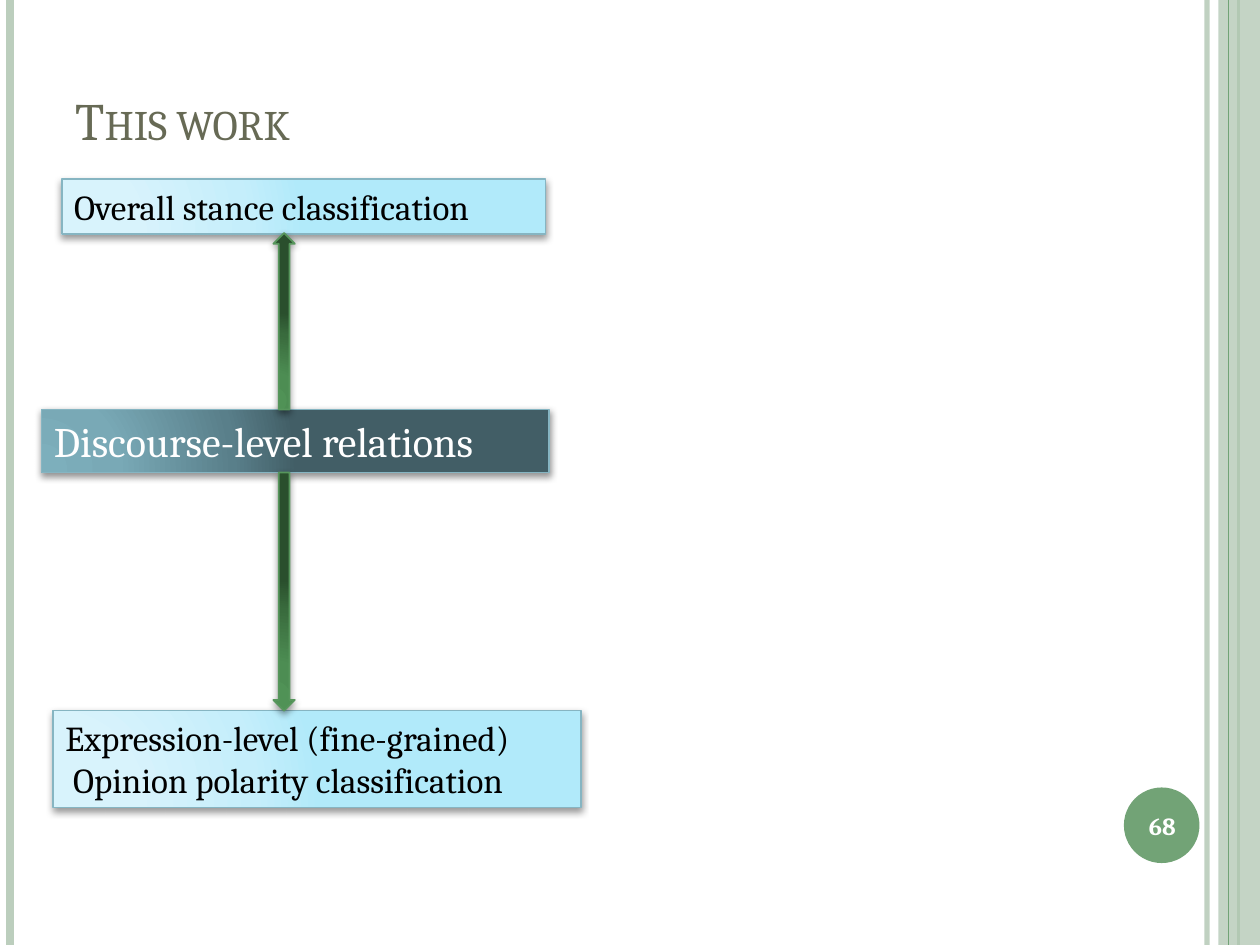
from lxml import etree
from pptx import Presentation
from pptx.dml.color import RGBColor
from pptx.enum.shapes import MSO_CONNECTOR, MSO_SHAPE
from pptx.enum.text import MSO_ANCHOR, PP_ALIGN
from pptx.oxml import parse_xml
from pptx.oxml.ns import nsdecls, qn
from pptx.util import Inches, Pt

STRAIGHT = MSO_CONNECTOR.STRAIGHT
RECT, OVAL = MSO_SHAPE.RECTANGLE, MSO_SHAPE.OVAL
UP, DOWN = MSO_SHAPE.UP_ARROW, MSO_SHAPE.DOWN_ARROW
TOP, MIDDLE, BOTTOM = MSO_ANCHOR.TOP, MSO_ANCHOR.MIDDLE, MSO_ANCHOR.BOTTOM
LEFT, CENTER = PP_ALIGN.LEFT, PP_ALIGN.CENTER

COLORS = {
    "pale": "BCCEBD", "green": "72A376", "title": "676A55",
    "black": "000000", "white": "FFFFFF",
}
STYLES = {
    "level": {"stops": ["DBF4FC", "D8F3FC", "C5EEFB", "B1EAFA"],
              "edge": "86B5C2", "shadow": (40, 2)},
    "relations": {"stops": ["7DAFBC", "79A9B6", "597F8A", "425E66"],
                  "edge": "86B5C2", "shadow": (42, 1.6)},
    "arrow": {"stops": ["509256", "4D8D53", "396B3D", "2A4F2D"],
              "edge": "57965C", "shadow": (42, 1.6)},
}
STOP_POSITIONS = [0, 30, 75, 100]


def write_text(shape, lines, size, color, anchor=TOP, align=LEFT, bold=False):
    frame = shape.text_frame
    frame.word_wrap = True
    frame.vertical_anchor = anchor
    frame.text = "\n".join(lines)
    for paragraph in frame.paragraphs:
        paragraph.alignment = align
        font = paragraph.runs[0].font
        values = {"name": "Cambria", "size": Pt(size), "bold": bold}
        for attribute, value in values.items():
            setattr(font, attribute, value)
        font.color.rgb = RGBColor.from_string(COLORS[color])


def add_glossy(kind, box, style):
    shape = slide.shapes.add_shape(kind, *map(Inches, box))
    stops = "".join(
        f'<a:gs pos="{position * 1000}"><a:srgbClr val="{color}"/></a:gs>'
        for position, color in zip(STOP_POSITIONS, style["stops"]))
    properties = shape._element.spPr
    properties.append(parse_xml(
        f'<a:gradFill {nsdecls("a")} rotWithShape="1"><a:gsLst>{stops}</a:gsLst>'
        '<a:path path="circle"><a:fillToRect l="5000" t="100000" r="120000" b="10000"/>'
        '</a:path></a:gradFill>'))
    shape.line.color.rgb = RGBColor.from_string(style["edge"])
    shape.line.width = Pt(1)
    shape.shadow.inherit = False
    opacity, distance = style["shadow"]
    properties.find(qn("a:effectLst")).append(parse_xml(
        f'<a:outerShdw {nsdecls("a")} blurRad="{Pt(4)}" dist="{Pt(distance)}" '
        'dir="5400000" rotWithShape="0">'
        f'<a:srgbClr val="{COLORS["black"]}"><a:alpha val="{opacity * 1000}"/></a:srgbClr>'
        '</a:outerShdw>'))
    return shape


presentation = Presentation()
presentation.slide_width = Inches(10)
presentation.slide_height = Inches(7.5)
slide = presentation.slides.add_slide(presentation.slide_layouts[6])

side_band = slide.shapes.add_shape(RECT, Inches(9.67), 0, Inches(0.33), Inches(7.5))
page_disc = slide.shapes.add_shape(OVAL, Inches(8.92), Inches(6.25), Inches(0.6), Inches(0.6))
for ornament, color in [(side_band, "pale"), (page_disc, "green")]:
    ornament.shadow.inherit = False
    ornament.fill.solid()
    ornament.fill.fore_color.rgb = RGBColor.from_string(COLORS[color])
    ornament.line.fill.background()

rails = [(9.58, "pale", 3), (0.08, "pale", 4.5), (9.83, "green", 1.5), (9.75, "green", 0.75)]
translucent = [(side_band, 87)]
for x, color, width in rails:
    rail = slide.shapes.add_connector(STRAIGHT, Inches(x), 0, Inches(x), Inches(7.5))
    rail.line.color.rgb = RGBColor.from_string(COLORS[color])
    rail.line.width = Pt(width)
    etree.SubElement(rail._element.spPr, qn("a:effectLst"))
    if width == 3:
        translucent.append((rail, 93))
    if x == 9.83:
        side_band._element.addprevious(rail._element)

for ornament, opacity in translucent:
    tint = ornament._element.spPr.find(".//" + qn("a:srgbClr"))
    etree.SubElement(tint, qn("a:alpha"), val=str(opacity * 1000))

title = slide.shapes.add_textbox(Inches(0.5), Inches(0.3), Inches(8.17), Inches(0.95))
write_text(title, ["This work"], 30, "title", anchor=BOTTOM)
title.text_frame.paragraphs[0].runs[0].font._element.set("cap", "small")

levels = [
    ((0.33, 3.25, 4.03, 0.5), "relations", ["Discourse-level relations"], 24, "white"),
    ((0.49, 1.42, 3.84, 0.44), "level", ["Overall stance classification"], 20, "black"),
    ((0.42, 5.64, 4.19, 0.77), "level",
     ["Expression-level (fine-grained)", " Opinion polarity classification"], 20, "black"),
]
for box, style, lines, size, color in levels:
    write_text(add_glossy(RECT, box, STYLES[style]), lines, size, color)

for kind, top, height in [(UP, 1.85, 1.4), (DOWN, 3.75, 1.89)]:
    add_glossy(kind, (2.17, top, 0.17, height), STYLES["arrow"])

page_number = slide.shapes.add_textbox(Inches(8.89), Inches(6.27), Inches(0.67), Inches(0.57))
write_text(page_number, ["68"], 14, "white", anchor=MIDDLE, align=CENTER, bold=True)

presentation.save("out.pptx")
